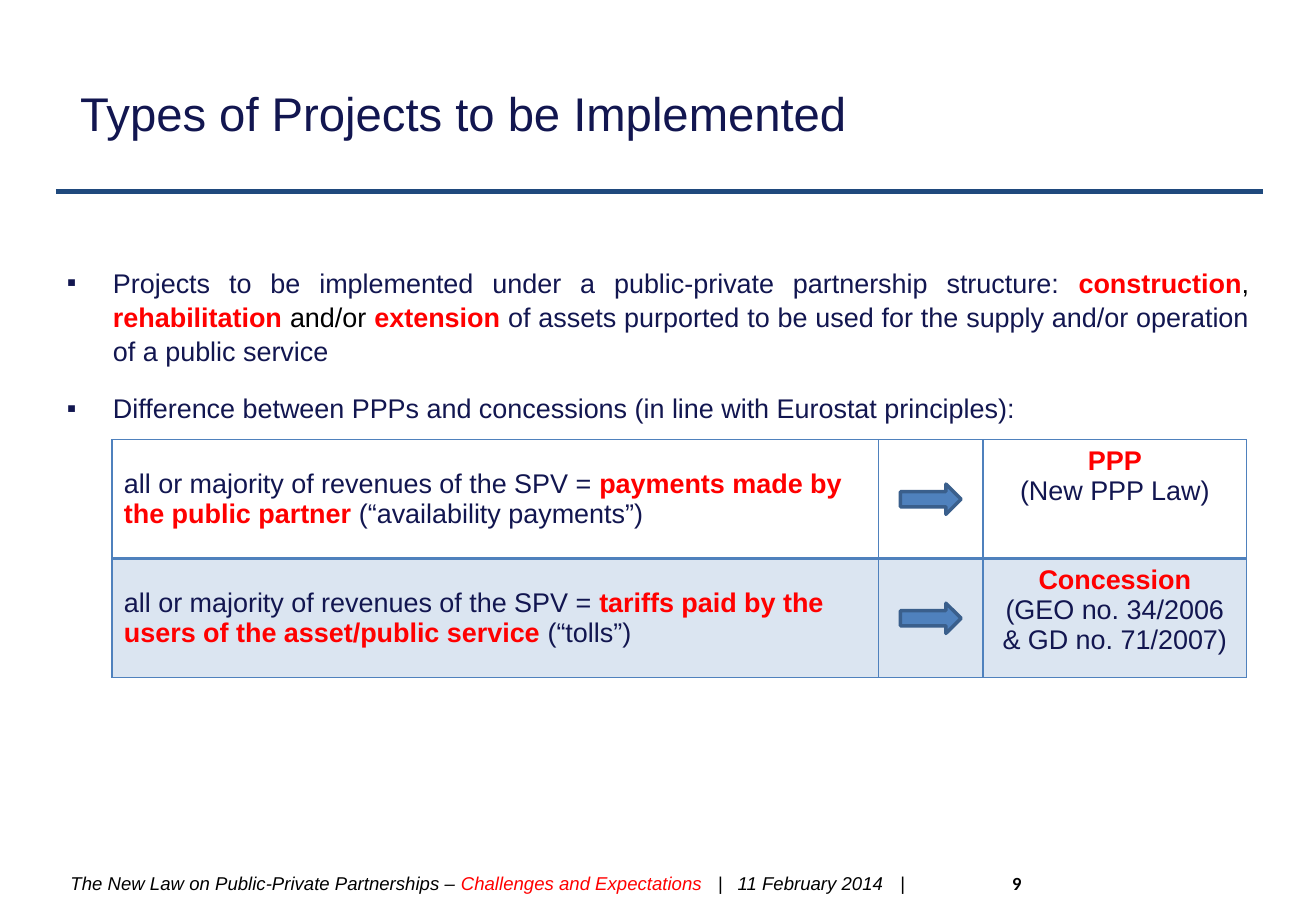
"""Builds the slide on types of projects under the partnership law."""
from dataclasses import dataclass

from lxml import etree
from pptx import Presentation
from pptx import util as u
from pptx.dml.color import RGBColor
from pptx.enum import shapes, text
from pptx.oxml import ns


@dataclass(frozen=True)
class Theme:
    """Colours and type sizes."""
    font: str = "Arial"
    number_font: str = "Calibri"
    navy: str = "121650"
    red: str = "FF0000"
    black: str = "000000"
    rule: str = "1F497D"
    blue: str = "4F81BD"
    arrow_edge: str = "3A5F8C"
    band: str = "DBE5F1"
    title_size: int = 28
    body_size: int = 16
    footer_size: int = 11


def colour(value):
    """Turns a hex string into a colour."""
    return RGBColor.from_string(value)


def add_element(parent, tag, **attributes):
    """Appends a DrawingML element."""
    values = {name: str(value) for name, value in attributes.items()}
    return etree.SubElement(parent, ns.qn(tag), values)


def add_text(paragraph, words, *, size, color, font, bold=False, italic=False):
    """Adds one formatted run."""
    run = paragraph.add_run()
    run.text = words
    run.font.size = u.Pt(size)
    run.font.name = font
    run.font.bold = bold
    run.font.italic = italic
    run.font.color.rgb = colour(color)


class SlideBuilder:
    """Holds the theme and the current slide."""

    def __init__(self, presentation, theme):
        self.theme = theme
        self.slide = presentation.slides.add_slide(presentation.slide_layouts[1])

    def place(self, shape, left, top, width, height):
        """Moves a shape to a place given in inches."""
        shape.left, shape.top = u.Inches(left), u.Inches(top)
        shape.width, shape.height = u.Inches(width), u.Inches(height)

    def add_body_runs(self, paragraph, runs):
        """Adds body runs, with red ones in bold."""
        for words, color in runs:
            add_text(paragraph, words, size=self.theme.body_size, color=color,
                     font=self.theme.font, bold=color == self.theme.red)

    def title(self, words, *place):
        """Fills the title placeholder."""
        shape = self.slide.shapes.title
        self.place(shape, *place)
        frame = shape.text_frame
        frame.margin_left = u.Inches(0.12)
        frame.vertical_anchor = text.MSO_ANCHOR.MIDDLE
        paragraph = frame.paragraphs[0]
        paragraph.alignment = text.PP_ALIGN.LEFT
        add_text(paragraph, words, size=self.theme.title_size,
                 color=self.theme.navy, font=self.theme.font)

    def bullets(self, items, *place):
        """Fills the body placeholder with square bullets."""
        shape = self.slide.placeholders[1]
        self.place(shape, *place)
        frame = shape.text_frame
        frame.auto_size = text.MSO_AUTO_SIZE.NONE
        for index, runs in enumerate(items):
            paragraph = frame.add_paragraph() if index else frame.paragraphs[0]
            properties = paragraph._p.get_or_add_pPr()
            properties.set("marL", str(u.Inches(0.38)))
            properties.set("indent", str(u.Inches(-0.38)))
            bullet_color = add_element(properties, "a:buClr")
            add_element(bullet_color, "a:srgbClr", val=self.theme.navy)
            add_element(properties, "a:buFont", typeface=self.theme.font)
            add_element(properties, "a:buChar", char="▪")
            paragraph.alignment = text.PP_ALIGN.JUSTIFY
            paragraph.line_spacing = 1.05
            paragraph.space_before = u.Pt(14 if index else 0)
            self.add_body_runs(paragraph, runs)

    def rule(self, left, right, top):
        """Draws the line under the title."""
        line = self.slide.shapes.add_connector(
            shapes.MSO_CONNECTOR.STRAIGHT, u.Inches(left), u.Inches(top),
            u.Inches(right), u.Inches(top))
        line.line.color.rgb = colour(self.theme.rule)
        line.line.width = u.Pt(3)
        add_element(line._element.spPr, "a:effectLst")

    def borders(self, cell, bottom):
        """Outlines a table cell."""
        properties = cell._tc.get_or_add_tcPr()
        for side, width in (("L", 1), ("R", 1), ("T", 1), ("B", bottom)):
            line = add_element(properties, f"a:ln{side}", w=u.Pt(width))
            fill = add_element(line, "a:solidFill")
            add_element(fill, "a:srgbClr", val=self.theme.blue)

    def table(self, rows, left, top, widths, row_height):
        """Adds the comparison table, with an arrow in each middle cell."""
        frame = self.slide.shapes.add_table(
            len(rows), len(widths), u.Inches(left), u.Inches(top),
            u.Inches(sum(widths)), u.Inches(row_height * len(rows)))
        table = frame.table
        table.first_row = table.horz_banding = False
        for column, width in zip(table.columns, widths):
            column.width = u.Inches(width)
        for row_index, (revenue, outcome) in enumerate(rows):
            table.rows[row_index].height = u.Inches(row_height)
            for cell in table.rows[row_index].cells:
                self.borders(cell, 1 if row_index else 2)
                if row_index:
                    cell.fill.solid()
                    cell.fill.fore_color.rgb = colour(self.theme.band)
                else:
                    cell.fill.background()
            source, _, result = table.rows[row_index].cells
            source.vertical_anchor = text.MSO_ANCHOR.MIDDLE
            self.add_body_runs(source.text_frame.paragraphs[0], revenue)
            result_frame = result.text_frame
            for index, run in enumerate(outcome):
                paragraph = (result_frame.add_paragraph() if index
                             else result_frame.paragraphs[0])
                paragraph.alignment = text.PP_ALIGN.CENTER
                self.add_body_runs(paragraph, [run])
            self.arrow(left + widths[0] + widths[1] / 2,
                       top + row_height * (row_index + 0.5))

    def arrow(self, center, middle, width=0.5, height=0.25):
        """Draws a block arrow around a centre point."""
        shape = self.slide.shapes.add_shape(
            shapes.MSO_SHAPE.RIGHT_ARROW, u.Inches(center - width / 2),
            u.Inches(middle - height / 2), u.Inches(width), u.Inches(height))
        shape.shadow.inherit = False
        shape.fill.solid()
        shape.fill.fore_color.rgb = colour(self.theme.blue)
        shape.line.color.rgb = colour(self.theme.arrow_edge)
        shape.line.width = u.Pt(2)

    def footer(self, runs, stops, *place):
        """Adds the footer line, spaced by tab stops."""
        box = self.slide.shapes.add_textbox(*map(u.Inches, place))
        frame = box.text_frame
        frame.word_wrap = True
        frame.vertical_anchor = text.MSO_ANCHOR.MIDDLE
        frame.margin_left = frame.margin_right = u.Inches(0.12)
        paragraph = frame.paragraphs[0]
        tabs = add_element(paragraph._p.get_or_add_pPr(), "a:tabLst")
        for stop in stops:
            add_element(tabs, "a:tab", pos=u.Inches(stop), algn="l")
        for words, style in runs:
            add_text(paragraph, words, **{
                "size": self.theme.footer_size, "color": self.theme.black,
                "font": self.theme.font, **style})


def main():
    """Builds and saves the presentation."""
    presentation = Presentation()
    presentation.slide_width = u.Inches(10.83)
    presentation.slide_height = u.Inches(7.5)
    theme = Theme()
    navy, red, black = theme.navy, theme.red, theme.black
    builder = SlideBuilder(presentation, theme)
    builder.title("Types of Projects to be Implemented", 0.54, 0.3, 9.75, 1.25)
    builder.bullets([
        [("Projects to be implemented under a public-private partnership structure: ", navy),
         ("construction", red), (", ", black), ("rehabilitation", red),
         (" and/or", black), (" extension ", red),
         ("of assets purported to be used for the supply and/or operation of a public service", navy)],
        [("Difference between PPPs and concessions (in line with Eurostat principles):", navy)],
    ], 0.45, 2.13, 9.93, 1.4)
    builder.rule(0.46, 10.39, 1.58)
    revenues = ("all or majority of revenues of the SPV = ", navy)
    builder.table([
        ([revenues, ("payments made by the public partner ", red),
          ("(“availability payments”)", navy)],
         [("PPP", red), ("(New PPP Law)", navy)]),
        ([revenues, ("tariffs paid by the users of the asset/public service ", red),
          ("(“tolls”)", navy)],
         [("Concession", red), ("(GEO no. 34/2006 & GD no. 71/2007)", navy)]),
    ], 0.92, 3.62, (6.31, 0.86, 2.17), 0.98)
    builder.footer([
        ("The New Law on Public-Private Partnerships – ", {"italic": True}),
        ("Challenges and Expectations", {"italic": True, "color": red}),
        ("\t|\t", {}), ("11 February 2014", {"italic": True}), ("\t|\t", {}),
        ("9", {"font": theme.number_font, "bold": True}),
    ], (5.33, 5.49, 6.83, 7.75), 0.46, 7.06, 8.45, 0.42)
    presentation.save("out.pptx")


if __name__ == "__main__":
    main()
